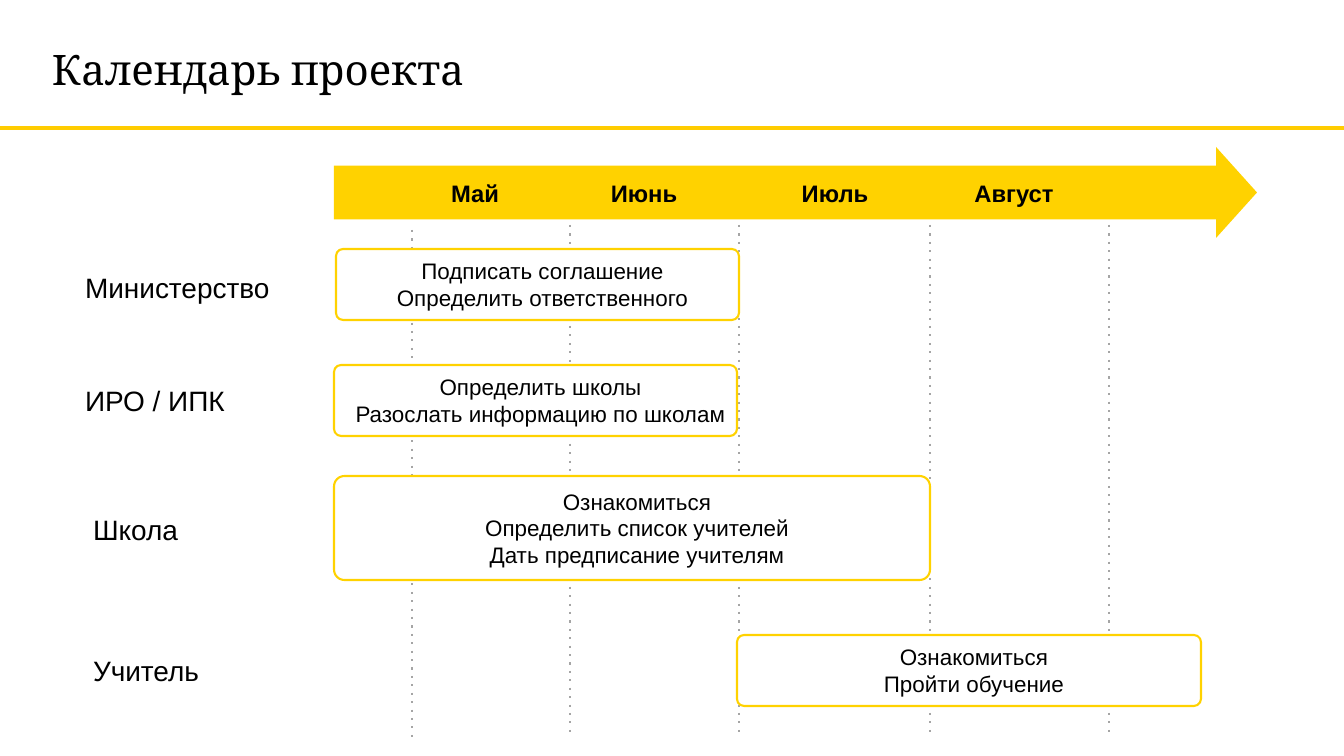
from lxml import etree
from pptx import Presentation
from pptx import util as u
from pptx.dml.color import RGBColor
from pptx.enum import dml, shapes, text
from pptx.oxml.ns import qn

PX = 914400 / 50.4
WIDTH, HEIGHT = 1344, 756
BLACK = RGBColor(0, 0, 0)
WHITE = RGBColor(255, 255, 255)
GRAY = RGBColor(0xA5, 0xA5, 0xA5)
GOLD = RGBColor(0xFF, 0xCC, 0x00)
YELLOW = RGBColor(0xFF, 0xD2, 0x00)

TITLE = "Календарь проекта"
RULE_Y = 128
GUIDE_BOTTOM = 737
GUIDES = [(412, 230), (570, 225), (739, 225), (930, 225), (1109, 225)]
ARROW = (334, 147, 923, 91)
MONTH_WIDTH = 150
MONTHS = [("Май", 475), ("Июнь", 644), ("Июль", 835), ("Август", 1014)]
ROLES = [
    ("Министерство", 80, 268),
    ("ИРО / ИПК", 80, 381),
    ("Школа", 88, 510),
    ("Учитель", 88, 651),
]
LINE_HEIGHT = 33
TASKS = [
    (336, 249, 403, ["Подписать соглашение", "Определить ответственного"]),
    (334, 365, 403, ["Определить школы", "Разослать информацию по школам"]),
    (334, 476, 596, ["Ознакомиться", "Определить список учителей",
                     "Дать предписание учителям"]),
    (737, 635, 464, ["Ознакомиться", "Пройти обучение"]),
]


def px(*values):
    return [u.Emu(round(value * PX)) for value in values]


def write(shape, lines, size, font="Arial", bold=False, align=text.PP_ALIGN.LEFT,
          anchor=text.MSO_ANCHOR.TOP, margins=(5, 3, 5, 3)):
    frame = shape.text_frame
    frame.word_wrap = True
    frame.vertical_anchor = anchor
    (frame.margin_left, frame.margin_top,
     frame.margin_right, frame.margin_bottom) = px(*margins)
    for index, line in enumerate(lines):
        paragraph = frame.add_paragraph() if index else frame.paragraphs[0]
        paragraph.alignment = align
        run = paragraph.add_run()
        run.text = line
        run.font.name = font
        run.font.size = u.Pt(size)
        run.font.bold = bold
        run.font.color.rgb = BLACK


def add_line(slide, x1, y1, x2, y2, color, width):
    connector = slide.shapes.add_connector(
        shapes.MSO_CONNECTOR.STRAIGHT, *px(x1, y1, x2, y2))
    connector.line.color.rgb = color
    connector.line.width = u.Pt(width)
    etree.SubElement(connector.element.spPr, qn("a:effectLst"))
    return connector


def add_block(slide, kind, box, fill, adjustments):
    shape = slide.shapes.add_shape(kind, *px(*box))
    shape.shadow.inherit = False
    shape.fill.solid()
    shape.fill.fore_color.rgb = fill
    for index, value in enumerate(adjustments):
        shape.adjustments[index] = value
    return shape


def main():
    """Build the project calendar slide."""
    presentation = Presentation()
    presentation.slide_width, presentation.slide_height = px(WIDTH, HEIGHT)
    slide = presentation.slides.add_slide(presentation.slide_layouts[6])

    add_line(slide, 0, RULE_Y, WIDTH, RULE_Y, GOLD, 5)
    title = slide.shapes.add_textbox(*px(52, 0, 1239, 126))
    write(title, [TITLE], 60, font="Cambria", anchor=text.MSO_ANCHOR.MIDDLE,
          margins=(0, 11, 0, 0))

    for x, top in GUIDES:
        guide = add_line(slide, x, top, x, GUIDE_BOTTOM, GRAY, 3)
        guide.line.dash_style = dml.MSO_LINE.ROUND_DOT
        guide.element.spPr.find(qn("a:ln")).find(qn("a:prstDash")).set("val", "dot")

    arrow = add_block(slide, shapes.MSO_SHAPE.RIGHT_ARROW, ARROW, YELLOW, [0.59, 0.45])
    arrow.line.fill.background()
    for month, center in MONTHS:
        label = slide.shapes.add_textbox(
            *px(center - MONTH_WIDTH / 2, 176, MONTH_WIDTH, 34))
        write(label, [month], 34, bold=True, align=text.PP_ALIGN.CENTER)

    for role, left, top in ROLES:
        label = slide.shapes.add_textbox(*px(left, top, 240, 39))
        write(label, [role], 40)

    for left, top, width, lines in TASKS:
        height = LINE_HEIGHT * len(lines) + 5
        task = add_block(slide, shapes.MSO_SHAPE.ROUNDED_RECTANGLE,
                         (left, top, width, height), WHITE, [0.1])
        task.line.color.rgb = YELLOW
        task.line.width = u.Pt(3)
        write(task, lines, 32, align=text.PP_ALIGN.CENTER,
              anchor=text.MSO_ANCHOR.MIDDLE, margins=(15, 12, 5, 12))

    presentation.save("out.pptx")


if __name__ == "__main__":
    main()
